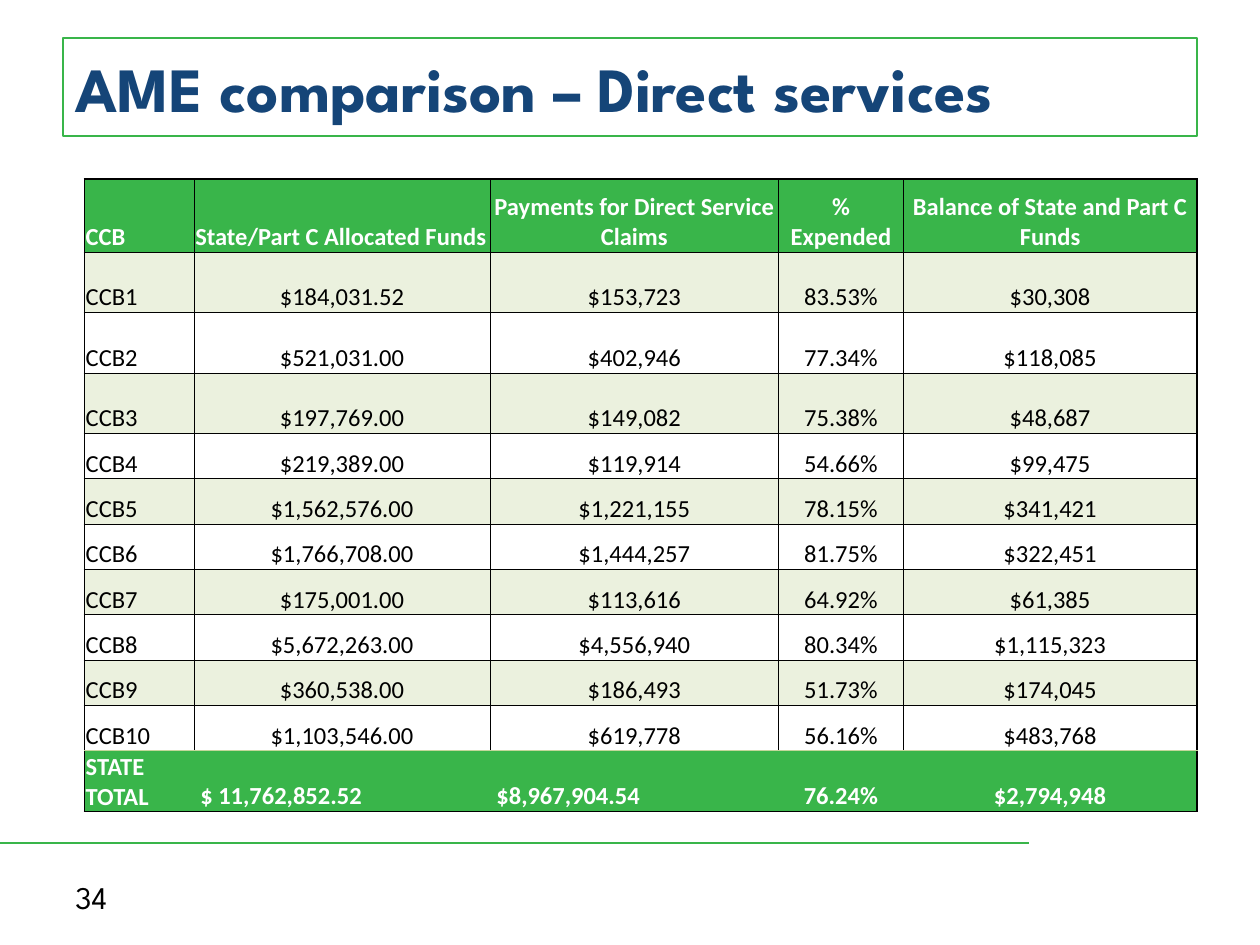
from lxml.etree import SubElement
from pptx import Presentation
from pptx.dml.color import RGBColor
from pptx.enum.shapes import MSO_CONNECTOR
from pptx.enum.text import MSO_ANCHOR, MSO_AUTO_SIZE, PP_ALIGN
from pptx.oxml import parse_xml
from pptx.oxml.ns import nsdecls, qn
from pptx.util import Inches, Pt

COLORS = {
    "green": "39B54A",
    "navy": "154578",
    "black": "000000",
    "white": "FFFFFF",
    "band": "EBF1DE",
    "olive": "C4D79B",
}
HEADERS = ["CCB", "State/Part C Allocated Funds", "Payments for Direct Service Claims",
           "% Expended", "Balance of State and Part C Funds"]
BODY = [
    ["CCB1", "$184,031.52", "$153,723", "83.53%", "$30,308"],
    ["CCB2", "$521,031.00", "$402,946", "77.34%", "$118,085"],
    ["CCB3", "$197,769.00", "$149,082", "75.38%", "$48,687"],
    ["CCB4", "$219,389.00", "$119,914", "54.66%", "$99,475"],
    ["CCB5", "$1,562,576.00", "$1,221,155", "78.15%", "$341,421"],
    ["CCB6", "$1,766,708.00", "$1,444,257", "81.75%", "$322,451"],
    ["CCB7", "$175,001.00", "$113,616", "64.92%", "$61,385"],
    ["CCB8", "$5,672,263.00", "$4,556,940", "80.34%", "$1,115,323"],
    ["CCB9", "$360,538.00", "$186,493", "51.73%", "$174,045"],
    ["CCB10", "$1,103,546.00", "$619,778", "56.16%", "$483,768"],
]
TOTAL = ["STATE TOTAL", "$ 11,762,852.52", "$8,967,904.54", "76.24%", "$2,794,948"]
COLUMN_WIDTHS = [0.87, 2.35, 2.29, 0.99, 2.33]
ROW_HEIGHTS = [0.58] + [0.48] * 3 + [0.36] * 7 + [0.48]


def set_font(para, name, size, color, bold=False):
    para.font.name = name
    para.font.size = Pt(size)
    para.font.bold = bold
    para.font.color.rgb = RGBColor.from_string(COLORS[color])


def set_borders(cell, borders):
    """Draw (color, points) borders in the order left, right, top, bottom."""
    properties = cell._tc.get_or_add_tcPr()
    for index, (side, border) in enumerate(zip("LRTB", borders)):
        if border:
            color, points = border
            width = Pt(points)
            paint = f'<a:solidFill><a:srgbClr val="{COLORS[color]}"/></a:solidFill>'
        else:
            width, paint = 0, "<a:noFill/>"
        properties.insert(index, parse_xml(
            f'<a:ln{side} {nsdecls("a")} w="{width}">{paint}</a:ln{side}>'))


deck = Presentation()
deck.slide_width, deck.slide_height = Inches(10), Inches(7.5)
page = deck.slides.add_slide(deck.slide_layouts[5])

# Footer rule
rule = page.shapes.add_connector(
    MSO_CONNECTOR.STRAIGHT, Inches(0), Inches(6.69), Inches(8.17), Inches(6.69))
rule.line.color.rgb = RGBColor.from_string(COLORS["green"])
rule.line.width = Pt(1.5)
SubElement(rule._element.spPr, qn("a:effectLst"))

# Slide number
number_box = page.shapes.add_textbox(Inches(0.5), Inches(6.92), Inches(2.33), Inches(0.4))
number_box.text_frame.word_wrap = True
number_box.text_frame.vertical_anchor = MSO_ANCHOR.MIDDLE
number_box.text_frame.text = "34"
set_font(number_box.text_frame.paragraphs[0], "League Spartan", 18, "black")

# Title
title = page.shapes.title
title.left, title.top = Inches(0.5), Inches(0.3)
title.width, title.height = Inches(9), Inches(0.78)
title.line.color.rgb = RGBColor.from_string(COLORS["green"])
title.line.width = Pt(1)
title.text_frame.text = "AME comparison – Direct services"
title.text_frame.auto_size = MSO_AUTO_SIZE.NONE
title.text_frame.vertical_anchor = MSO_ANCHOR.MIDDLE
title_para = title.text_frame.paragraphs[0]
title_para.alignment = PP_ALIGN.LEFT
set_font(title_para, "League Spartan", 36, "navy", bold=True)

# Table grid
rows = [HEADERS, *BODY, TOTAL]
last_row, last_column = len(rows) - 1, len(HEADERS) - 1
table = page.shapes.add_table(
    len(rows), len(HEADERS), Inches(0.67), Inches(1.42),
    Inches(sum(COLUMN_WIDTHS)), Inches(sum(ROW_HEIGHTS))).table
table.first_row = table.horz_banding = False
for column, width in zip(table.columns, COLUMN_WIDTHS):
    column.width = Inches(width)
for row, height in zip(table.rows, ROW_HEIGHTS):
    row.height = Inches(height)

# Table cells
thin, thick, divider = ("black", 0.5), ("black", 1), ("olive", 0.5)
for r, texts in enumerate(rows):
    is_total = r == last_row
    emphasized = r == 0 or is_total
    inner = None if is_total else thin
    top = thick if r == 0 else divider if is_total else thin
    bottom = thick if is_total else divider if r == last_row - 1 else thin
    for c, text in enumerate(texts):
        cell = table.cell(r, c)
        cell.text = text
        cell.vertical_anchor = MSO_ANCHOR.BOTTOM
        cell.margin_left = cell.margin_right = cell.margin_top = Inches(0.01)
        cell.margin_bottom = 0
        para = cell.text_frame.paragraphs[0]
        left_aligned = c == 0 or (r == 0 and c == 1) or (is_total and c < 3)
        para.alignment = PP_ALIGN.LEFT if left_aligned else PP_ALIGN.CENTER
        set_font(para, "Calibri", 14, "white" if emphasized else "black", emphasized)
        if is_total and c in (1, 2):
            cell.margin_left = Inches(0.05)
        if emphasized or r % 2:
            cell.fill.solid()
            cell.fill.fore_color.rgb = RGBColor.from_string(
                COLORS["green" if emphasized else "band"])
        else:
            cell.fill.background()
        set_borders(cell, [thick if c == 0 else inner,
                           thick if c == last_column else inner, top, bottom])

deck.save("out.pptx")
